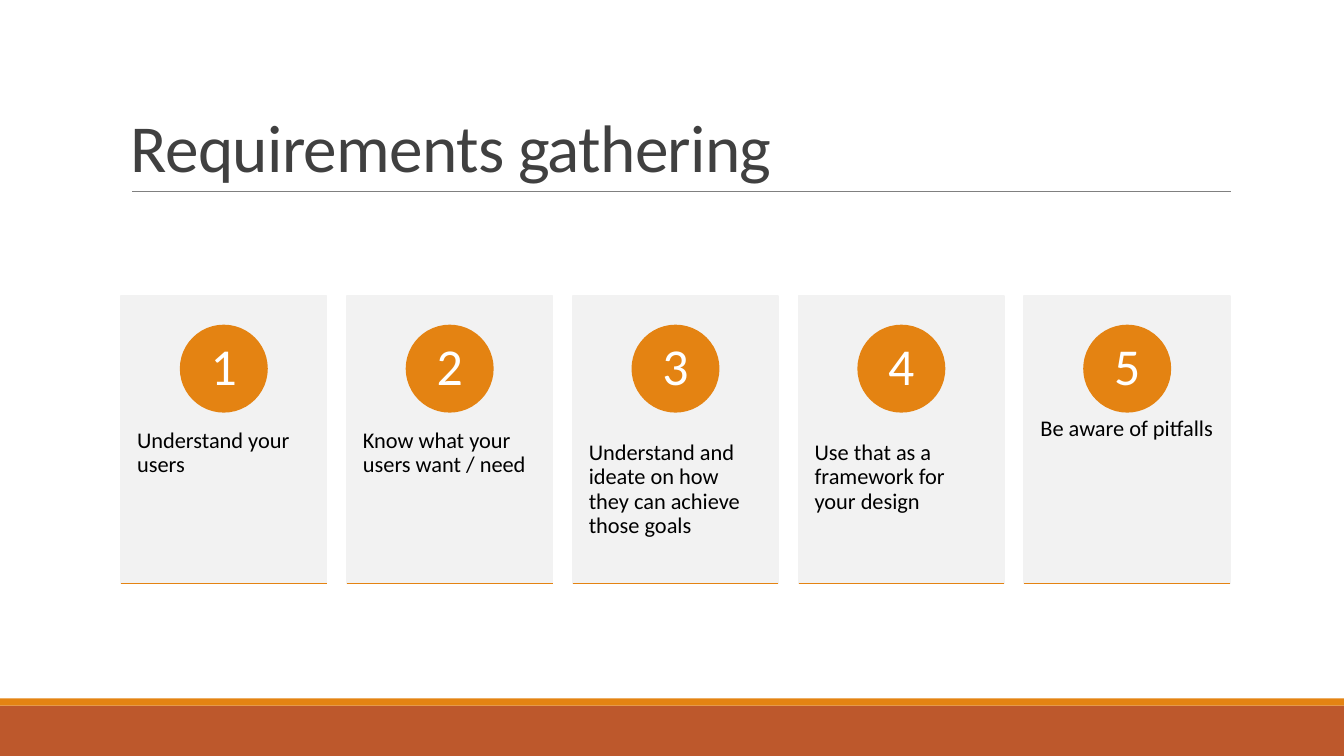
from lxml import etree
from pptx import Presentation
from pptx.dml.color import RGBColor
from pptx.enum.shapes import MSO_CONNECTOR, MSO_SHAPE
from pptx.enum.text import MSO_ANCHOR, PP_ALIGN
from pptx.oxml.ns import qn
from pptx.util import Inches, Pt

RECTANGLE, OVAL = MSO_SHAPE.RECTANGLE, MSO_SHAPE.OVAL
STRAIGHT = MSO_CONNECTOR.STRAIGHT
TOP, MIDDLE, BOTTOM = MSO_ANCHOR.TOP, MSO_ANCHOR.MIDDLE, MSO_ANCHOR.BOTTOM
LEFT, CENTER = PP_ALIGN.LEFT, PP_ALIGN.CENTER

FONT = "Calibri"
COLORS = {
    "orange": "E48312",
    "rust": "BD582C",
    "card": "F2F2F2",
    "rule": "808080",
    "title": "404040",
    "body": "000000",
    "number": "FFFFFF",
}
SLIDE_WIDTH, SLIDE_HEIGHT = 13.33, 7.5
STEPS = [
    "Understand your users",
    "Know what your users want / need",
    "Understand and ideate on how they can achieve those goals",
    "Use that as a framework for your design",
    "Be aware of pitfalls",
]


def color(name):
    return RGBColor.from_string(COLORS[name])


def add_block(slide, kind, box, fill, line_width=0):
    shape = slide.shapes.add_shape(kind, *map(Inches, box))
    shape.shadow.inherit = False
    shape.fill.solid()
    shape.fill.fore_color.rgb = color(fill)
    if line_width:
        shape.line.color.rgb = color(fill)
        shape.line.width = Pt(line_width)
    else:
        shape.line.fill.background()
    return shape


def add_line(slide, left, right, top, line_color, width):
    line = slide.shapes.add_connector(
        STRAIGHT, Inches(left), Inches(top), Inches(right), Inches(top))
    line.line.color.rgb = color(line_color)
    line.line.width = Pt(width)
    etree.SubElement(line._element.spPr, qn("a:effectLst"))


def write(shape, text, size, text_color, anchor=TOP, align=LEFT,
          insets=(0.1, 0.05), spacing=0.9):
    frame = shape.text_frame
    frame.word_wrap = True
    frame.vertical_anchor = anchor
    frame.margin_left = frame.margin_right = Inches(insets[0])
    frame.margin_top = frame.margin_bottom = Inches(insets[1])
    paragraph = frame.paragraphs[0]
    paragraph.alignment = align
    paragraph.line_spacing = spacing
    run = paragraph.add_run()
    run.text = text
    run.font.name = FONT
    run.font.size = Pt(size)
    run.font.color.rgb = color(text_color)
    return run


def add_footer(slide, left, top, width, height):
    stripe = 0.07
    add_block(slide, RECTANGLE, (left, top + stripe, width, height - stripe), "rust")
    add_block(slide, RECTANGLE, (left, top, width, stripe), "orange")


def add_title(slide, left, top, width, height):
    add_line(slide, left + 0.11, left + width + 0.01, top + height, "rule", 0.5)
    title = slide.shapes.add_textbox(*map(Inches, (left, top, width, height)))
    run = write(title, "Requirements gathering", 48, "title", BOTTOM, spacing=0.85)
    run._r.get_or_add_rPr().set("spc", "-50")


def add_card(slide, number, text, left, top, width, height):
    add_block(slide, RECTANGLE, (left, top, width, height), "card", 1.25)
    body = slide.shapes.add_textbox(
        *map(Inches, (left, top + 1.08, width, height * 0.6)))
    write(body, text, 16, "body", insets=(0.16, 0.36))
    diameter = height * 0.3
    circle = add_block(
        slide, OVAL,
        (left + (width - diameter) / 2, top + 0.29, diameter, diameter),
        "orange", 1.25)
    write(circle, str(number), 37, "number", MIDDLE, CENTER, (0.07, 0.01))
    add_line(slide, left, left + width, top + height, "orange", 1.25)


def add_cards(slide, left, top, width, height):
    gap = 0.2
    card_width = (width - gap * (len(STEPS) - 1)) / len(STEPS)
    for index, text in enumerate(STEPS):
        add_card(slide, index + 1, text, left + index * (card_width + gap),
                 top, card_width, height)


def main():
    presentation = Presentation()
    presentation.slide_width = Inches(SLIDE_WIDTH)
    presentation.slide_height = Inches(SLIDE_HEIGHT)
    slide = presentation.slides.add_slide(presentation.slide_layouts[6])
    add_footer(slide, 0, 6.93, SLIDE_WIDTH, 0.57)
    add_title(slide, 1.2, 0.31, 11, 1.59)
    add_cards(slide, 1.2, 2.94, 11, 2.85)
    presentation.save("out.pptx")


if __name__ == "__main__":
    main()
